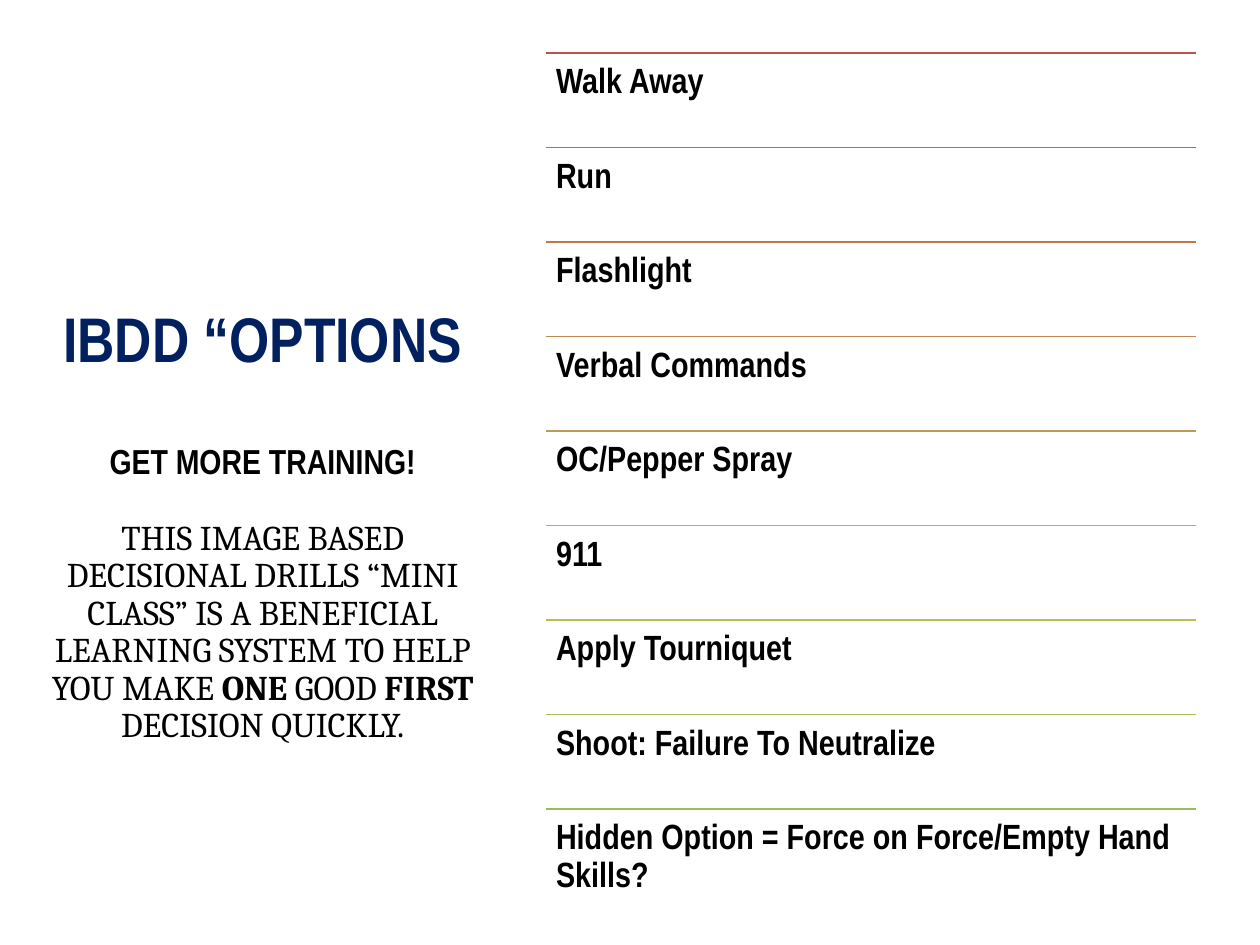
from pptx import Presentation
from pptx.dml.color import RGBColor
from pptx.enum.shapes import MSO_CONNECTOR
from pptx.enum.text import MSO_ANCHOR, MSO_AUTO_SIZE, PP_ALIGN
from pptx.oxml.ns import qn
from pptx.util import Cm, Pt
from lxml import etree

STRAIGHT = MSO_CONNECTOR.STRAIGHT
TOP = MSO_ANCHOR.TOP
NO_AUTOFIT = MSO_AUTO_SIZE.NONE
LEFT, CENTER = PP_ALIGN.LEFT, PP_ALIGN.CENTER

COLORS = {"background": "FFFFFF", "heading": "002060", "text": "000000"}
SANS, SERIF = "Arial Narrow", "Cambria"

OPTIONS = {
    "Walk Away": "C0504D",
    "Run": "BF644F",
    "Flashlight": "BF7750",
    "Verbal Commands": "BE8952",
    "OC/Pepper Spray": "BD9B53",
    "911": "BDAC55",
    "Apply Tourniquet": "BCBC56",
    "Shoot: Failure To Neutralize": "ABBC58",
    "Hidden Option = Force on Force/Empty Hand Skills?": "9BBB59",
}
LIST_LEFT, LIST_WIDTH = 11, 13.11
FIRST_TOP, LAST_TOP = 1.07, 16.31
ROW_HEIGHT = (LAST_TOP - FIRST_TOP) / (len(OPTIONS) - 1)


def add_run(paragraph, text, font=SANS, size=20, color="text", bold=True):
    run = paragraph.add_run()
    run.text = text
    run.font.name = font
    run.font.size = Pt(size)
    run.font.bold = bold
    run.font.color.rgb = RGBColor.from_string(COLORS[color])


class SlideBuilder:
    def __init__(self, slide):
        self.slide = slide
        fill = slide.background.fill
        fill.solid()
        fill.fore_color.rgb = RGBColor.from_string(COLORS["background"])

    def format_paragraph(self, paragraph, alignment, space_before=0):
        paragraph.alignment = alignment
        paragraph.line_spacing = 0.9
        paragraph.space_before = Pt(space_before)

    def title(self, left, top, width, height, inset_top, paragraphs):
        shape = self.slide.shapes.title
        shape.left, shape.top = Cm(left), Cm(top)
        shape.width, shape.height = Cm(width), Cm(height)
        frame = shape.text_frame
        frame.word_wrap = True
        frame.auto_size = NO_AUTOFIT
        frame.vertical_anchor = TOP
        frame.margin_top = Cm(inset_top)
        for index, (space_before, runs) in enumerate(paragraphs):
            paragraph = frame.add_paragraph() if index else frame.paragraphs[0]
            self.format_paragraph(paragraph, CENTER, space_before)
            for text, style in runs:
                add_run(paragraph, text, **style)

    def rule(self, left, top, width, color):
        line = self.slide.shapes.add_connector(
            STRAIGHT, Cm(left), Cm(top), Cm(left + width), Cm(top))
        line.line.color.rgb = RGBColor.from_string(color)
        line.line.width = Pt(0.75)
        etree.SubElement(line._element.spPr, qn("a:effectLst"))

    def label(self, left, top, width, height, text):
        box = self.slide.shapes.add_textbox(
            Cm(left), Cm(top), Cm(width), Cm(height))
        frame = box.text_frame
        frame.word_wrap = True
        frame.margin_left = frame.margin_right = Cm(0.21)
        frame.margin_top = frame.margin_bottom = Cm(0.21)
        self.format_paragraph(frame.paragraphs[0], LEFT)
        add_run(frame.paragraphs[0], text)


def main():
    presentation = Presentation()
    presentation.slide_width, presentation.slide_height = Cm(25.4), Cm(19.05)
    builder = SlideBuilder(
        presentation.slides.add_slide(presentation.slide_layouts[5]))

    plain = {"font": SERIF, "size": 19.8, "bold": False}
    strong = {**plain, "bold": True}
    builder.title(0.43, 3.91, 9.73, 14.3, 2.3, [
        (0, [("IBDD “OPTIONS", {"size": 36, "color": "heading"})]),
        (39, [("GET MORE TRAINING!", {"size": 19.8})]),
        (22, [
            ("THIS IMAGE BASED DECISIONAL DRILLS “MINI CLASS” IS A BENEFICIAL "
             "LEARNING SYSTEM TO HELP YOU MAKE ", plain),
            ("ONE", strong),
            (" GOOD ", plain),
            ("FIRST", strong),
            (" DECISION QUICKLY.", plain),
        ]),
    ])

    for row, (option, color) in enumerate(OPTIONS.items()):
        top = FIRST_TOP + row * ROW_HEIGHT
        builder.rule(LIST_LEFT, top, LIST_WIDTH, color)
        builder.label(LIST_LEFT, top, LIST_WIDTH, ROW_HEIGHT, option)

    presentation.save("out.pptx")


if __name__ == "__main__":
    main()
